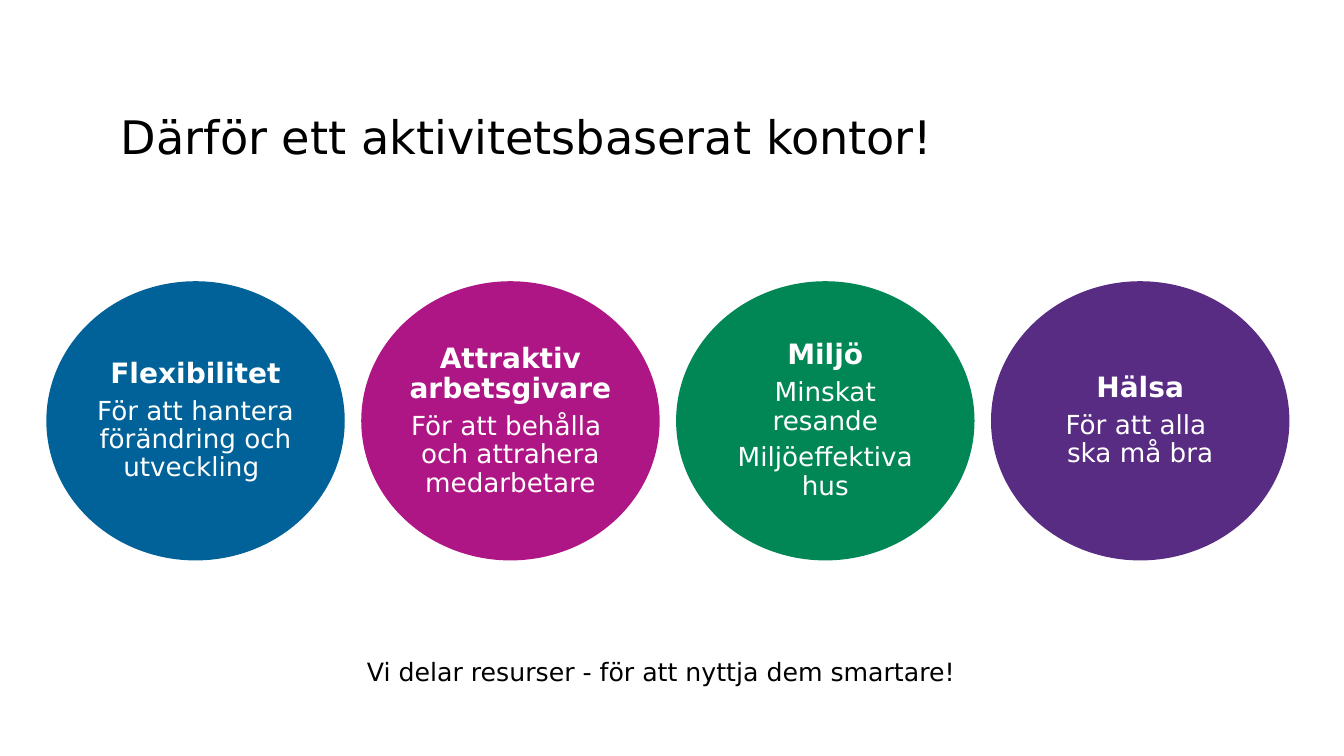
"""Build a slide with four reasons for an activity-based office."""
from dataclasses import dataclass

from pptx import Presentation
from pptx.dml.color import RGBColor
from pptx.enum.shapes import MSO_SHAPE
from pptx.enum.text import MSO_ANCHOR, PP_ALIGN
from pptx.util import Inches, Pt

ELLIPSE = MSO_SHAPE.OVAL
TOP, MIDDLE, BOTTOM = MSO_ANCHOR.TOP, MSO_ANCHOR.MIDDLE, MSO_ANCHOR.BOTTOM
CENTER = PP_ALIGN.CENTER


@dataclass(frozen=True)
class Theme:
    font: str = "DejaVu Sans"
    black: str = "000000"
    white: str = "FFFFFF"
    blue: str = "006298"
    magenta: str = "AF1685"
    green: str = "008755"
    purple: str = "582C83"
    title_size: float = 33
    heading_size: float = 20
    body_size: float = 18.7
    closing_size: float = 18


THEME = Theme()


def prepare_frame(frame, anchor):
    """Wrap the text, remove the insets and set the vertical anchor."""
    frame.word_wrap = True
    frame.vertical_anchor = anchor
    frame.margin_left = frame.margin_right = 0
    frame.margin_top = frame.margin_bottom = 0


def write(paragraph, text, size, color, bold=False):
    """Put text in a paragraph and format its runs."""
    paragraph.text = text
    for run in paragraph.runs:
        run.font.name = THEME.font
        run.font.size = Pt(size)
        run.font.bold = bold
        run.font.color.rgb = RGBColor.from_string(color)


presentation = Presentation()
presentation.slide_width = Inches(13.33)
presentation.slide_height = Inches(7.5)
slide = presentation.slides.add_slide(presentation.slide_layouts[6])

REASONS = [
    (THEME.blue, "Flexibilitet", ["För att hantera förändring och utveckling "]),
    (THEME.magenta, "Attraktiv arbetsgivare", ["För att behålla \noch attrahera medarbetare"]),
    (THEME.green, "Miljö", ["Minskat resande", "Miljöeffektiva hus"]),
    (THEME.purple, "Hälsa", ["För att alla \nska må bra"]),
]
FIRST_LEFT, PITCH = 0.46, 3.123

for index, (color, heading, details) in enumerate(REASONS):
    reason = slide.shapes.add_shape(
        ELLIPSE, Inches(FIRST_LEFT + index * PITCH), Inches(2.79), Inches(2.96), Inches(2.77)
    )
    reason.shadow.inherit = False
    reason.fill.solid()
    reason.fill.fore_color.rgb = RGBColor.from_string(color)
    reason.line.fill.background()
    prepare_frame(reason.text_frame, MIDDLE)
    write(reason.text_frame.paragraphs[0], heading, THEME.heading_size, THEME.white, bold=True)
    for detail in details:
        write(reason.text_frame.add_paragraph(), detail, THEME.body_size, THEME.white)
    for paragraph in reason.text_frame.paragraphs:
        paragraph.alignment = CENTER
        paragraph.line_spacing = 0.9
        paragraph.space_after = Pt(6)

STATEMENTS = [
    ("Därför ett aktivitetsbaserat kontor!", (1.2, 0.47, 9.45, 1.15), THEME.title_size, BOTTOM),
    ("Vi delar resurser - för att nyttja dem smartare!", (3.64, 6.51, 5.97, 0.3), THEME.closing_size, TOP),
]

for text, bounds, size, anchor in STATEMENTS:
    statement = slide.shapes.add_textbox(*map(Inches, bounds))
    prepare_frame(statement.text_frame, anchor)
    write(statement.text_frame.paragraphs[0], text, size, THEME.black)

presentation.save("out.pptx")
